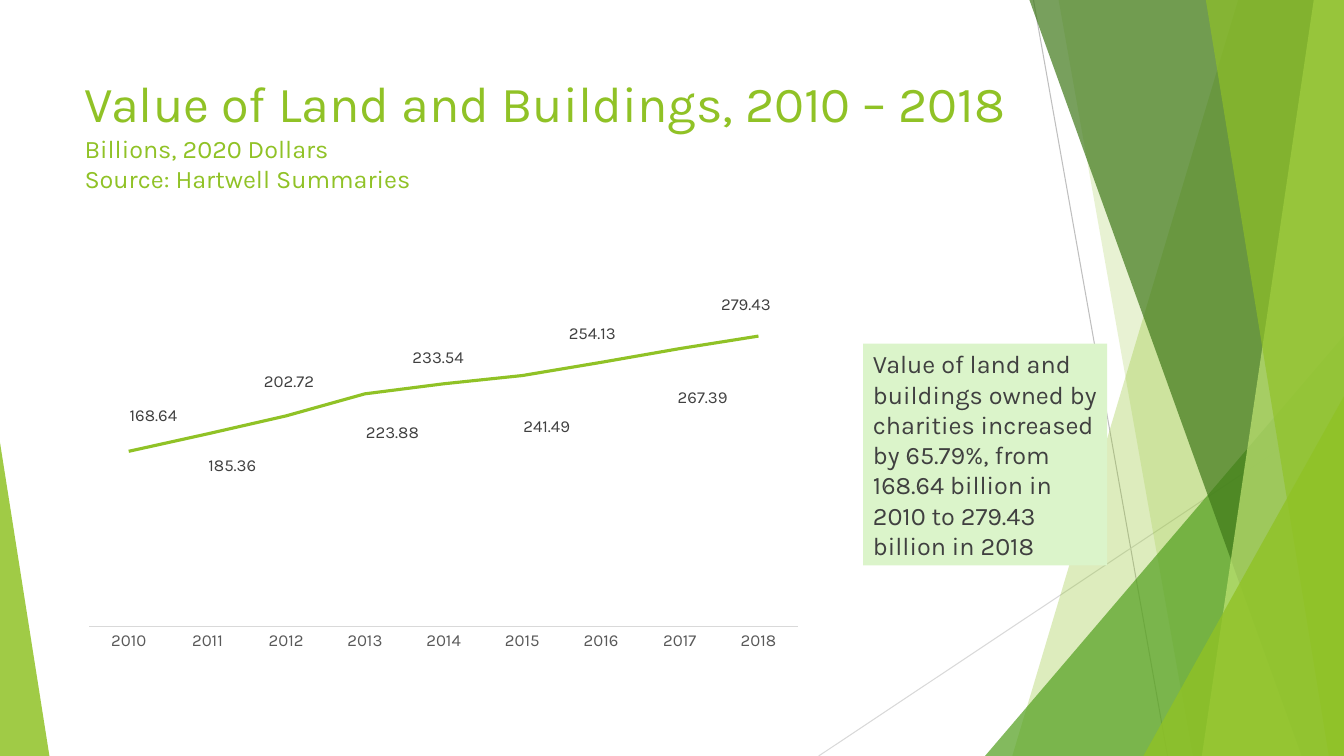
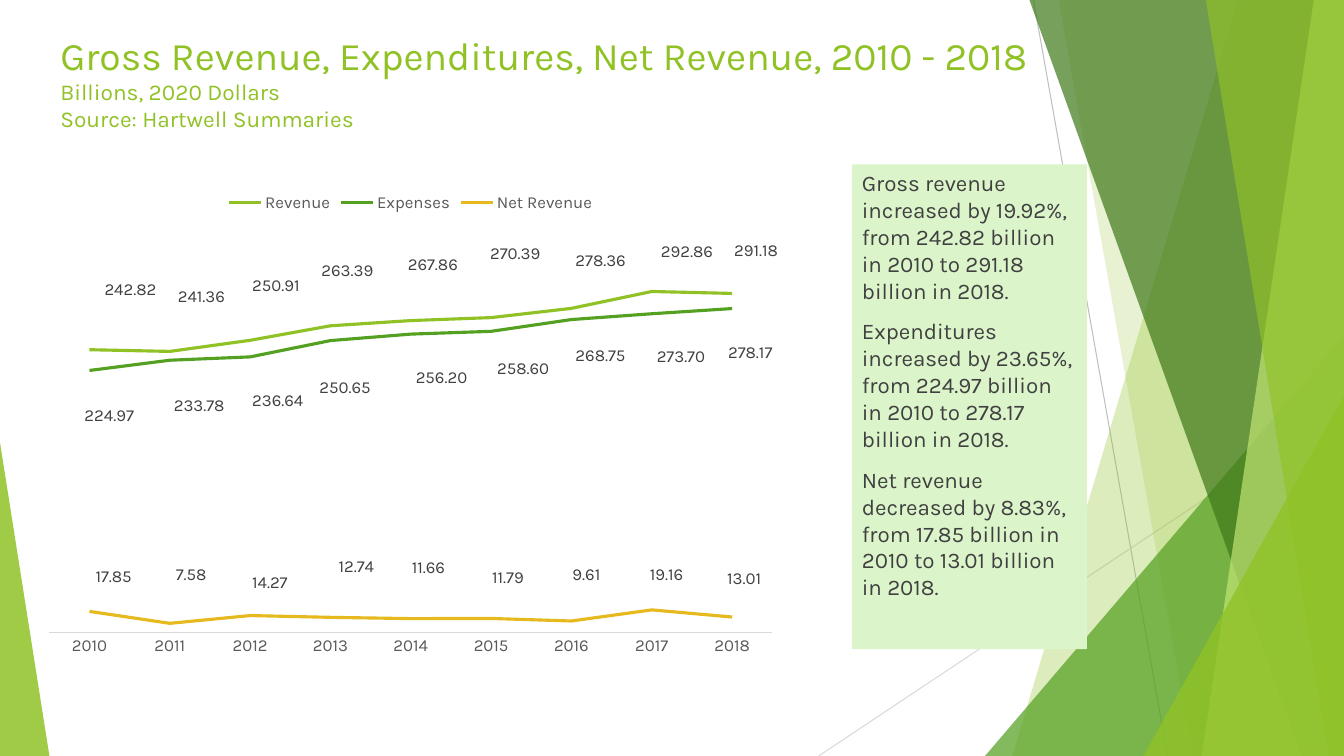
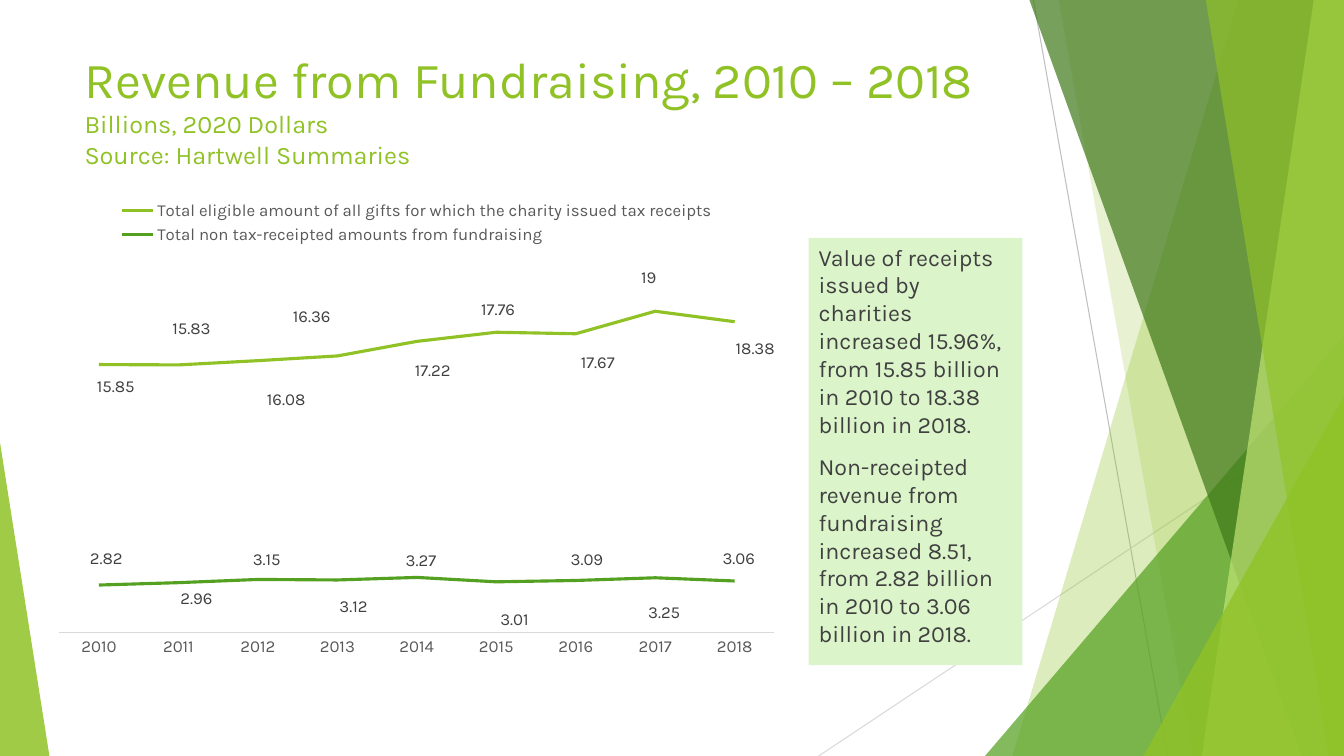
from dataclasses import dataclass

from lxml import etree
from pptx import Presentation
from pptx.chart import data as cd
from pptx.dml import color
from pptx.enum import chart as ch, shapes, text
from pptx.oxml import ns, parse_xml
from pptx.util import Inches, Pt


@dataclass(frozen=True)
class Theme:
    font: str = "Karla"
    lime: str = "90C226"
    green: str = "54A021"
    dark: str = "3F7819"
    pale: str = "C0E474"
    gold: str = "E6B91E"
    mint: str = "DBF4CA"
    ink: str = "404040"
    grey: str = "595959"
    rule: str = "D9D9D9"
    edge: str = "BFBFBF"
    small: float = 12
    gap: float = 10
    wide: float = 13.33
    high: float = 7.5


T = Theme()
YEARS = [str(y) for y in range(2010, 2019)]
SUB = ["Billions, 2020 Dollars", "Source: Hartwell Summaries"]
NUDGE = 3  # hundredths of an inch between a point and its label
LEADS = (f'<c:extLst {ns.nsdecls("c")}>'
         '<c:ext uri="{CE6537A1-D6FC-4f65-9D91-7224C49458BB}" xmlns:c15='
         '"http://schemas.microsoft.com/office/drawing/2012/chart">'
         '<c15:showLeaderLines val="0"/></c:ext></c:extLst>')


def rgb(code):
    return color.RGBColor.from_string(code)


def style(font, size, code):
    font.name, font.size = T.font, Pt(size)
    font.color.rgb = rgb(code)


def paint(shape, code, alpha=100):
    shape.shadow.inherit = False
    shape.line.fill.background()
    shape.fill.solid()
    shape.fill.fore_color.rgb = rgb(code)
    if alpha < 100:
        clr = shape.fill._xPr.find(".//" + ns.qn("a:srgbClr"))
        etree.SubElement(clr, ns.qn("a:alpha")).set("val", str(alpha * 1000))


# Shared backdrop
def line(slide, start, end, code):
    ends = [Inches(v) for v in (*start, *end)]
    rule = slide.shapes.add_connector(shapes.MSO_CONNECTOR.STRAIGHT, *ends)
    rule.line.color.rgb = rgb(code)
    rule.line.width = Pt(0.75)
    etree.SubElement(rule._element.spPr, ns.qn("a:effectLst"))


def band(slide, top, foot, code, alpha):
    """A band from a slanted left edge to the right side of the slide."""
    wide, high = Inches(T.wide), Inches(T.high)
    pen = slide.shapes.build_freeform(Inches(top), 0)
    pen.add_line_segments([(wide, 0), (wide, high), (Inches(foot), high)])
    paint(pen.convert_to_shape(), code, alpha)


def wedge(slide, left, top, width, tip, code, alpha):
    """A right triangle standing on the foot of the slide."""
    box = [Inches(v) for v in (left, top, width, T.high - top)]
    tri = slide.shapes.add_shape(shapes.MSO_SHAPE.ISOSCELES_TRIANGLE, *box)
    tri.adjustments[0] = tip
    paint(tri, code, alpha)


def backdrop(slide):
    line(slide, (10.25, 0), (11.58, T.high), T.edge)
    line(slide, (T.wide, 4.03), (8.12, T.high), T.rule)
    band(slide, 12.28, 10.04, T.lime, 30)
    band(slide, 10.5, 11.83, T.lime, 20)
    wedge(slide, 9.77, 3.33, 3.56, 1, T.green, 72)
    band(slide, 10.21, 12.91, T.dark, 70)
    band(slide, 13.03, 11.92, T.pale, 70)
    band(slide, 11.96, 13.18, T.lime, 65)
    wedge(slide, 11.34, 3.93, 1.99, 1, T.lime, 80)
    wedge(slide, 0, 4.39, 0.49, 0, T.lime, 85)


# Text regions
def heading(slide, box, words, big, small):
    frame = slide.shapes.add_textbox(*map(Inches, box)).text_frame
    frame.word_wrap = True
    para = frame.paragraphs[0]
    for i, row in enumerate([words] + SUB):
        if i:
            para.add_line_break()
        run = para.add_run()
        run.text = row
        style(run.font, small if i else big, T.lime)


def panel(slide, box, size, notes):
    rect = slide.shapes.add_shape(shapes.MSO_SHAPE.RECTANGLE, *map(Inches, box))
    paint(rect, T.mint)
    frame = rect.text_frame
    frame.word_wrap = True
    frame.vertical_anchor = text.MSO_ANCHOR.TOP
    for i, note in enumerate(notes):
        para = frame.add_paragraph() if i else frame.paragraphs[0]
        para.text = note
        para.alignment = text.PP_ALIGN.LEFT
        para.space_before = Pt(T.gap if i else 0)
        style(para.font, size, T.ink)


# Chart region
def layout(inner=False, **parts):
    """A manual chart layout; parts are shares of the chart's size."""
    tags = '<c:layoutTarget val="inner"/>' if inner else ""
    if inner:
        tags += '<c:xMode val="edge"/><c:yMode val="edge"/>'
    tags += "".join(f'<c:{k} val="{v:.4f}"/>' for k, v in parts.items())
    return parse_xml(f'<c:layout {ns.nsdecls("c")}><c:manualLayout>{tags}'
                     "</c:manualLayout></c:layout>")


def labels(series, box, shifts, form):
    """Value labels, each moved by (right, down) hundredths of an inch."""
    every = series.data_labels
    every.show_value = True
    every.number_format, every.number_format_is_linked = form, False
    style(every.font, T.small, T.ink)
    for i, (right, down) in enumerate(shifts):
        label = series.points[i].data_label
        style(label.font, T.small, T.ink)
        label.position = ch.XL_LABEL_POSITION.RIGHT
        tag = label._dLbl.find(ns.qn("c:idx"))
        tag.addnext(layout(x=(right - NUDGE) / 100 / box[2],
                           y=down / 100 / box[3]))
    # No leader lines
    for lead in every._element.findall(ns.qn("c:showLeaderLines")):
        lead.set("val", "0")
    every._element.append(parse_xml(LEADS))


def graph(slide, box, plot, top, form, rows):
    data = cd.CategoryChartData(number_format=form)
    data.categories = YEARS
    for name, _, vals, _ in rows:
        data.add_series(name, vals)
    chart = slide.shapes.add_chart(ch.XL_CHART_TYPE.LINE, *map(Inches, box),
                                   data).chart
    style(chart.font, T.small, T.grey)
    chart.has_title = False
    chart.has_legend = len(rows) > 1
    if chart.has_legend:
        chart.legend.position = ch.XL_LEGEND_POSITION.TOP
        chart.legend.include_in_layout = False
        style(chart.legend.font, T.small, T.grey)
    # Axes
    vals = chart.value_axis
    vals.minimum_scale, vals.maximum_scale = 0, top
    vals.has_major_gridlines = vals.visible = False
    cats = chart.category_axis
    cats.major_tick_mark = ch.XL_TICK_MARK.NONE
    cats.format.line.color.rgb = rgb(T.rule)
    cats.format.line.width = Pt(0.75)
    style(cats.tick_labels.font, T.small, T.grey)
    # Plot area
    area = chart._chartSpace.chart.plotArea
    for old in area.findall(ns.qn("c:layout")):
        area.remove(old)
    area.insert(0, layout(True, **dict(zip("xywh", plot))))
    # Lines
    chart.plots[0].vary_by_categories = False
    for series, (_, code, _, shifts) in zip(chart.plots[0].series, rows):
        series.smooth = False
        series.marker.style = ch.XL_MARKER_STYLE.NONE
        series.format.line.color.rgb = rgb(code)
        series.format.line.width = Pt(2.25)
        labels(series, box, shifts, form)


# Slides
def land(slide):
    heading(slide, (0.74, 0.67, 9.4, 1.44),
            "Value of Land and Buildings, 2010 – 2018", 36, 18)
    panel(slide, (8.56, 3.41, 2.42, 2.2), 18, [
        "Value of land and buildings owned by charities increased by 65.79%, "
        "from 168.64 billion in 2010 to 279.43 billion in 2018"])
    graph(slide, (0.74, 2.36, 7.32, 4.24), (0.02, 0.18, 0.96, 0.73), 300,
          "#,##0.00", [
        ("Series 1", T.lime,
         [168.64, 185.36, 202.72, 223.88, 233.54, 241.49, 254.13, 267.39,
          279.43],
         [(0, -35), (0, 32), (-23, -34), (0, 39), (-32, -26), (0, 51),
          (-33, -28), (-3, 49), (-38, -31)])])


def gross(slide):
    heading(slide, (0.5, 0.26, 10.06, 1.27),
            "Gross Revenue, Expenditures, Net Revenue, 2010 - 2018",
            27.9, 16.2)
    panel(slide, (8.45, 1.63, 2.33, 4.81), 16, [
        "Gross revenue increased by 19.92%, from 242.82 billion in 2010 to "
        "291.18 billion in 2018.",
        "Expenditures increased by 23.65%, from 224.97 billion in 2010 to "
        "278.17 billion in 2018.",
        "Net revenue decreased by 8.83%, from 17.85 billion in 2010 to "
        "13.01 billion in 2018."])
    graph(slide, (0.34, 1.8, 7.47, 4.81), (0.02, 0.09, 0.96, 0.84), 350,
          "#,##0.00", [
        ("Revenue", T.lime,
         [242.82, 241.36, 250.91, 263.39, 267.86, 270.39, 278.36, 292.86,
          291.18],
         [(14, -60), (7, -54), (1, -54), (-10, -55), (-4, -55), (-2, -63),
          (3, -47), (8, -39), (1, -42)]),
        ("Expenses", T.green,
         [224.97, 233.78, 236.64, 250.65, 256.2, 258.6, 268.75, 273.7,
          278.17],
         [(-6, 45), (3, 45), (1, 43), (-12, 47), (4, 43), (5, 37), (3, 36),
          (4, 43), (-5, 44)]),
        ("Net Revenue", T.gold,
         [17.85, 7.58, 14.27, 12.74, 11.66, 11.79, 9.61, 19.16, 13.01],
         [(5, -34), (5, -48), (1, -33), (7, -50), (0, -51), (0, -40),
          (0, -46), (-3, -35), (-6, -38)])])


def funds(slide):
    heading(slide, (0.74, 0.43, 9.4, 1.44),
            "Revenue from Fundraising, 2010 – 2018", 36, 18)
    panel(slide, (8.02, 2.36, 2.12, 4.24), 16.6, [
        "Value of receipts issued by charities increased 15.96%, from 15.85 "
        "billion in 2010 to 18.38 billion in 2018.",
        "Non-receipted revenue from fundraising increased 8.51, from 2.82 "
        "billion in 2010 to 3.06 billion in 2018."])
    graph(slide, (0.44, 1.88, 7.39, 4.73), (0.02, 0.22, 0.96, 0.71), 20,
          "General", [
        ("Total eligible amount of all gifts for which the charity issued "
         "tax receipts", T.lime,
         [15.85, 15.83, 16.08, 16.36, 17.22, 17.76, 17.67, 19, 18.38],
         [(-3, 22), (-7, -36), (8, 39), (-45, -39), (-3, 29), (-16, -22),
          (4, 29), (-15, -33), (0, 27)]),
        ("Total non tax-receipted amounts from fundraising", T.green,
         [2.82, 2.96, 3.15, 3.12, 3.27, 3.01, 3.09, 3.25, 3.06],
         [(-10, -26), (1, 16), (-6, -20), (1, 27), (-12, -17), (3, 38),
          (-6, -21), (-8, 35), (-13, -22)])])


def main():
    deck = Presentation()
    deck.slide_width, deck.slide_height = Inches(T.wide), Inches(T.high)
    for fill in (land, gross, funds):
        slide = deck.slides.add_slide(deck.slide_layouts[6])
        backdrop(slide)
        fill(slide)
    deck.save("out.pptx")


if __name__ == "__main__":
    main()
